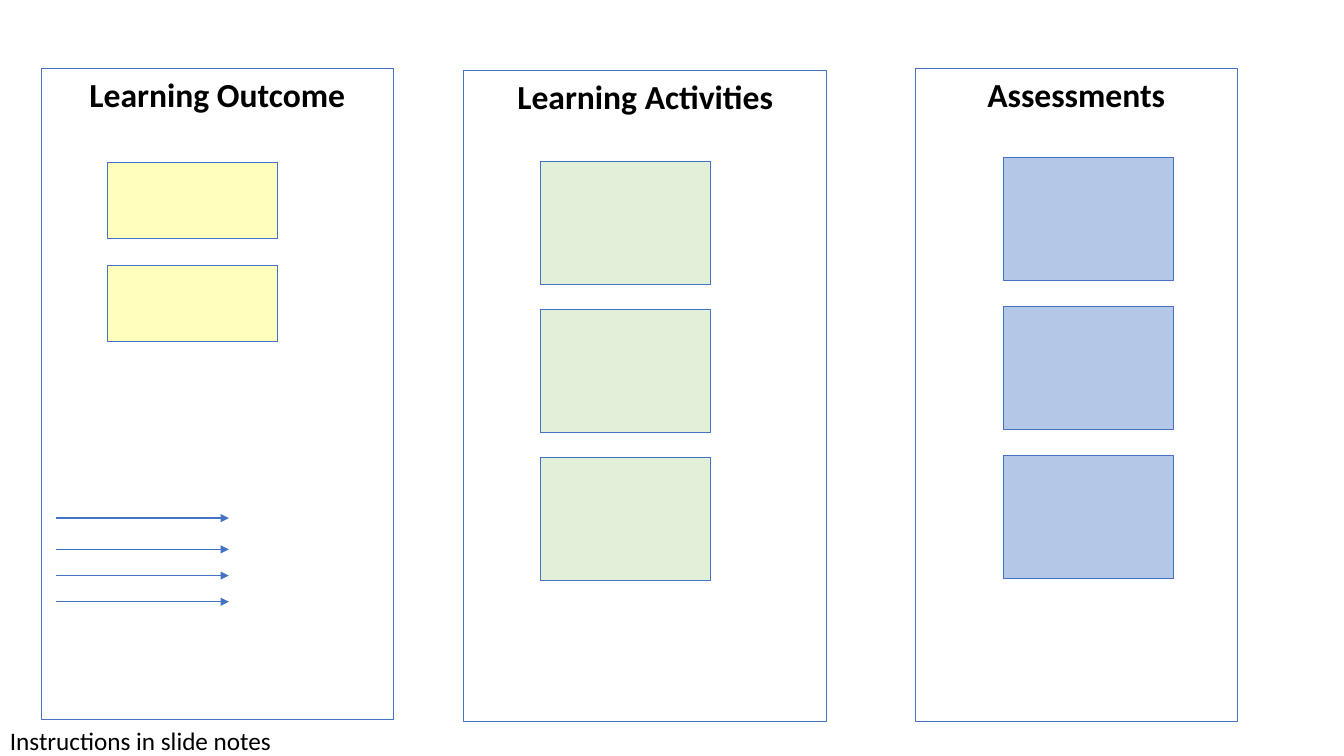
from lxml import etree
from pptx import Presentation
from pptx.dml.color import RGBColor
from pptx.enum.shapes import MSO_CONNECTOR, MSO_SHAPE
from pptx.enum.text import MSO_ANCHOR, PP_ALIGN
from pptx.oxml.ns import qn
from pptx.util import Pt

RECTANGLE = MSO_SHAPE.RECTANGLE
STRAIGHT = MSO_CONNECTOR.STRAIGHT
TOP = MSO_ANCHOR.TOP
CENTER = PP_ALIGN.CENTER
LEFT = PP_ALIGN.LEFT

EMU_PER_PX = 9144
FONT = "Calibri"
BLANK_LAYOUT = 6
COLORS = {
    "outline": "4472C4",
    "text": "000000",
    "outcome": "FFFEBD",
    "activity": "E2F0D9",
    "assessment": "B4C7E7",
}

# heading, (left, top, width, height)
COLUMNS = [
    ("Learning Outcome", (41, 68, 349, 646)),
    ("Learning Activities", (460, 70, 360, 646)),
    ("Assessments", (908, 68, 319, 648)),
]
# color, left, top, height, pitch, count
CARD_STACKS = [
    ("outcome", 106, 161, 76, 102, 2),
    ("activity", 536, 160, 122, 147, 3),
    ("assessment", 995, 156, 122, 148, 3),
]
CARD_WIDTH = 169
ARROW_LEFT, ARROW_RIGHT = 56, 227
ARROW_TOPS = [514, 545, 571, 597]


def px(*lengths):
    return [length * EMU_PER_PX for length in lengths]


def color(name):
    return RGBColor.from_string(COLORS[name])


def write_text(shape, text, size, alignment, bold=False):
    frame = shape.text_frame
    frame.word_wrap = True
    frame.vertical_anchor = TOP
    paragraph = frame.paragraphs[0]
    paragraph.text = text
    paragraph.alignment = alignment
    font = paragraph.font
    font.name = FONT
    font.size = Pt(size)
    font.bold = bold
    font.color.rgb = color("text")


def add_box(slide, bounds, fill=None):
    shape = slide.shapes.add_shape(RECTANGLE, *px(*bounds))
    shape.shadow.inherit = False
    shape.line.color.rgb = color("outline")
    shape.line.width = Pt(0.5)
    if fill:
        shape.fill.solid()
        shape.fill.fore_color.rgb = color(fill)
    else:
        shape.fill.background()
    return shape


def add_card_stack(slide, fill, left, top, height, pitch, count):
    for index in range(count):
        add_box(slide, (left, top + index * pitch, CARD_WIDTH, height), fill)


def add_arrow(slide, top):
    arrow = slide.shapes.add_connector(
        STRAIGHT, *px(ARROW_LEFT, top, ARROW_RIGHT, top))
    arrow.line.color.rgb = color("outline")
    arrow.line.width = Pt(1)
    line = arrow.line._get_or_add_ln()
    etree.SubElement(line, qn("a:tailEnd"), type="triangle")
    etree.SubElement(arrow._element.spPr, qn("a:effectLst"))


def main():
    presentation = Presentation()
    presentation.slide_width, presentation.slide_height = px(1333, 750)
    slide = presentation.slides.add_slide(
        presentation.slide_layouts[BLANK_LAYOUT])
    for heading, bounds in COLUMNS:
        write_text(add_box(slide, bounds), heading, 24, CENTER, bold=True)
    for stack in CARD_STACKS:
        add_card_stack(slide, *stack)
    for top in ARROW_TOPS:
        add_arrow(slide, top)
    caption = slide.shapes.add_textbox(*px(0, 715, 501, 40))
    write_text(caption, "Instructions in slide notes", 18, LEFT)
    presentation.save("out.pptx")


if __name__ == "__main__":
    main()
